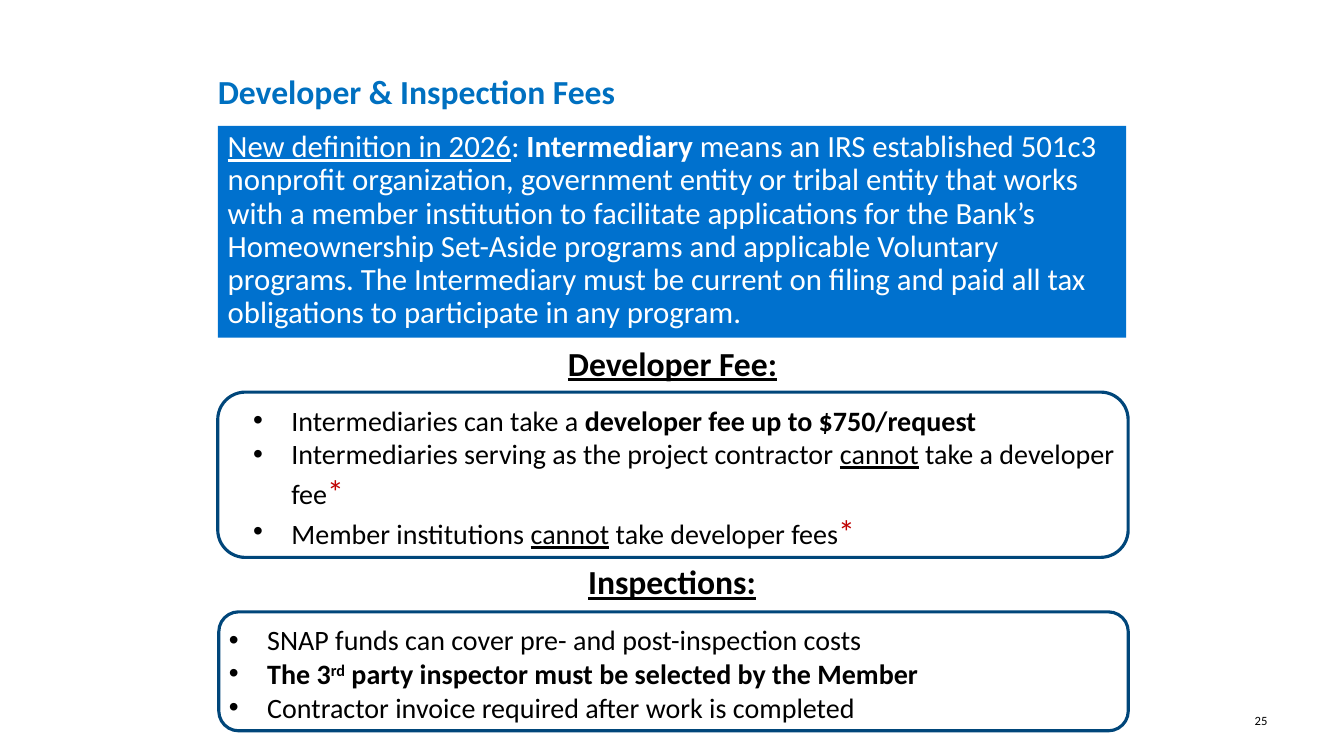
from dataclasses import dataclass

from lxml.etree import SubElement
from pptx import Presentation
from pptx.dml.color import RGBColor
from pptx.enum.shapes import MSO_SHAPE
from pptx.enum.text import MSO_ANCHOR, MSO_AUTO_SIZE, PP_ALIGN
from pptx.oxml.ns import qn
from pptx.util import Inches, Pt


@dataclass(frozen=True)
class Theme:
    font: str = "Calibri"
    title_color: str = "0070C0"
    banner: str = "0071CE"
    outline: str = "00467A"
    ink: str = "000000"
    light: str = "FFFFFF"
    accent: str = "C00000"
    heading_size: int = 24
    banner_size: int = 22
    body_size: int = 20
    number_size: int = 9
    outline_width: float = 2.25
    bullet_indent: float = 0.38


BOLD = {"bold": True}
UNDERLINE = {"underline": True}


class SlideBuilder:
    def __init__(self, presentation, theme):
        self.theme = theme
        self.slide = presentation.slides.add_slide(presentation.slide_layouts[3])

    def place(self, shape, box):
        for name, value in zip(("left", "top", "width", "height"), box):
            setattr(shape, name, Inches(value))

    def frame(self, shape, anchor=MSO_ANCHOR.TOP, wrap=True):
        text_frame = shape.text_frame
        settings = {"word_wrap": wrap, "vertical_anchor": anchor,
                    "auto_size": MSO_AUTO_SIZE.NONE}
        for name, value in settings.items():
            setattr(text_frame, name, value)
        return text_frame

    def fill_paragraph(self, paragraph, runs, size, color, **paragraph_format):
        """Fill a paragraph with (text, format) pairs."""
        for name, value in paragraph_format.items():
            setattr(paragraph, name, value)
        for text, changes in runs:
            run = paragraph.add_run()
            run.text = text
            values = {"name": self.theme.font, "size": size, "color": color,
                      "bold": False, "underline": False, **changes}
            run.font.color.rgb = RGBColor.from_string(values.pop("color"))
            run.font.size = Pt(values.pop("size"))
            baseline = values.pop("baseline", None)
            if baseline:
                run._r.get_or_add_rPr().set("baseline", str(baseline))
            for name, value in values.items():
                setattr(run.font, name, value)

    def title(self, text, box):
        shape = self.slide.shapes.title
        self.place(shape, box)
        paragraph = self.frame(shape, MSO_ANCHOR.MIDDLE).paragraphs[0]
        self.fill_paragraph(paragraph, [(text, BOLD)], self.theme.heading_size,
                            self.theme.title_color, alignment=PP_ALIGN.LEFT)

    def label(self, text, box, size, alignment, changes, **frame_format):
        shape = self.slide.shapes.add_textbox(*map(Inches, box))
        paragraph = self.frame(shape, **frame_format).paragraphs[0]
        self.fill_paragraph(paragraph, [(text, changes)], size, self.theme.ink,
                            alignment=alignment)

    def heading(self, text, box, wrap=True):
        self.label(text, box, self.theme.heading_size, PP_ALIGN.CENTER,
                   BOLD | UNDERLINE, wrap=wrap)

    def banner(self, runs, box):
        shape = self.slide.shapes.add_shape(MSO_SHAPE.RECTANGLE, *map(Inches, box))
        shape.shadow.inherit = False
        shape.fill.solid()
        shape.fill.fore_color.rgb = RGBColor.from_string(self.theme.banner)
        shape.line.fill.background()
        self.fill_paragraph(self.frame(shape).paragraphs[0], runs,
                            self.theme.banner_size, self.theme.light,
                            alignment=PP_ALIGN.LEFT, line_spacing=0.9,
                            space_after=Pt(18))

    def outline(self, box):
        shape = self.slide.shapes.add_shape(MSO_SHAPE.ROUNDED_RECTANGLE,
                                            *map(Inches, box))
        shape.shadow.inherit = False
        shape.fill.background()
        shape.line.color.rgb = RGBColor.from_string(self.theme.outline)
        shape.line.width = Pt(self.theme.outline_width)

    def bullets(self, placeholder_index, items, box):
        shape = self.slide.placeholders[placeholder_index]
        self.place(shape, box)
        text_frame = self.frame(shape)
        indent = Inches(self.theme.bullet_indent)
        for number, runs in enumerate(items):
            paragraph = text_frame.add_paragraph() if number else text_frame.paragraphs[0]
            properties = paragraph._p.get_or_add_pPr()
            properties.set("marL", str(indent))
            properties.set("indent", str(-indent))
            SubElement(properties, qn("a:buFont")).set("typeface", "Arial")
            SubElement(properties, qn("a:buChar")).set("char", "•")
            self.fill_paragraph(paragraph, runs, self.theme.body_size,
                                self.theme.ink, space_before=Pt(0))


def main():
    presentation = Presentation()
    presentation.slide_width = Inches(13.33)
    presentation.slide_height = Inches(7.5)
    theme = Theme()
    builder = SlideBuilder(presentation, theme)
    asterisk = ("*", {"size": theme.heading_size, "color": theme.accent})
    cannot = ("cannot", UNDERLINE)

    builder.title("Developer & Inspection Fees", (2.06, 0.65, 8.17, 0.5))
    builder.banner([
        ("New definition in 2026", UNDERLINE),
        (":", {}),
        (" Intermediary ", BOLD),
        ("means an IRS established 501c3 nonprofit organization, government "
         "entity or tribal entity that works with a member institution to "
         "facilitate applications for the Bank’s Homeownership Set-Aside "
         "programs and applicable Voluntary programs. The Intermediary must be "
         "current on filing and paid all tax obligations to participate in any "
         "program.", {}),
    ], (2.16, 1.25, 9.01, 2.1))

    builder.heading("Developer Fee:", (4.17, 3.35, 5, 0.5))
    builder.outline((2.16, 3.89, 9.03, 1.64))
    builder.bullets(1, [
        [("Intermediaries can take a ", {}),
         ("developer fee up to $750/request", BOLD)],
        [("Intermediaries serving as the project contractor ", {}), cannot,
         (" take a developer fee", {}), asterisk],
        [("Member institutions ", {}), cannot,
         (" take developer fees", {}), asterisk],
    ], (2.41, 3.95, 9.03, 1.58))

    builder.heading("Inspections:", (5.72, 5.52, 1.89, 0.5), wrap=False)
    builder.outline((2.17, 6.07, 9.02, 1.18))
    builder.bullets(2, [
        [("SNAP funds can cover pre- and post-inspection costs", {})],
        [("The 3", BOLD), ("rd", BOLD | {"baseline": 30000}),
         (" party inspector must be selected by the Member", BOLD)],
        [("Contractor invoice required after work is completed", {})],
    ], (2.17, 6.13, 9, 1.11))

    builder.label("25", (9.56, 6.95, 3.11, 0.4), theme.number_size,
                  PP_ALIGN.RIGHT, {}, anchor=MSO_ANCHOR.MIDDLE)
    presentation.save("out.pptx")


if __name__ == "__main__":
    main()
